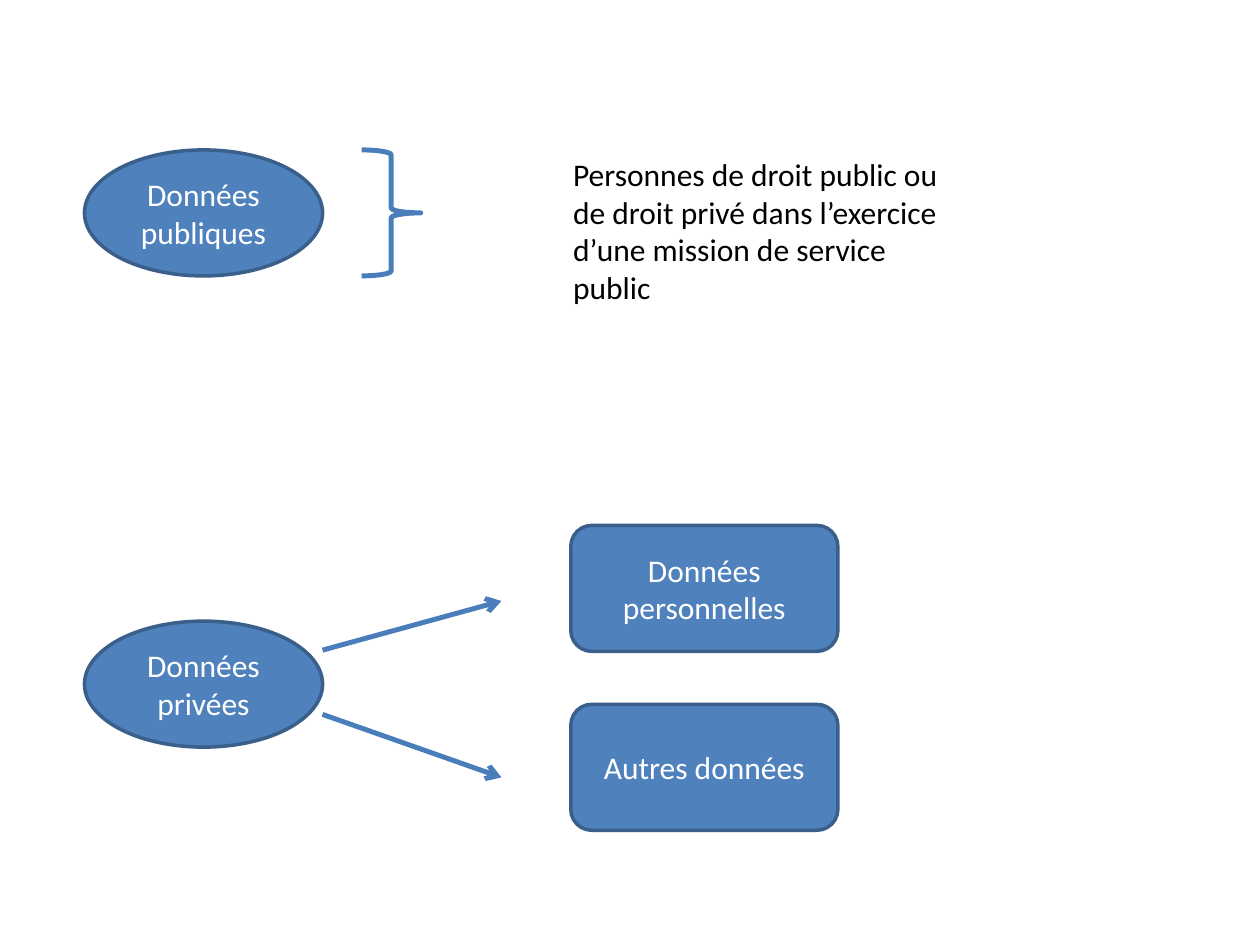
from dataclasses import dataclass

from lxml import etree
from pptx import Presentation
from pptx import util as u
from pptx.dml.color import RGBColor
from pptx.enum import shapes, text
from pptx.oxml.ns import qn

COLS, ROWS = 100, 75
WIDE, HIGH = u.Inches(10), u.Inches(7.5)


@dataclass(frozen=True)
class Theme:
    """Colours, font and sizes of the slide."""
    fill: str = "4F81BD"
    edge: str = "3A5F8B"
    link: str = "4A7EBB"
    light: str = "FFFFFF"
    dark: str = "000000"
    font: str = "Calibri"
    size: float = 18
    thin: float = 2
    thick: float = 2.83


THEME = Theme()
KIND = shapes.MSO_SHAPE


def grid(*spots):
    """Turn alternating columns and rows into slide lengths."""
    units = (WIDE / COLS, HIGH / ROWS)
    return [u.Emu(round(n * units[i % 2])) for i, n in enumerate(spots)]


def stroke(line, color, width):
    """Set the colour and width of a line."""
    line.color.rgb = RGBColor.from_string(color)
    line.width = u.Pt(width)


def write(shape, words, color=THEME.light, align=text.PP_ALIGN.CENTER,
          anchor=text.MSO_ANCHOR.MIDDLE):
    """Put formatted text into a shape."""
    frame = shape.text_frame
    frame.word_wrap = True
    frame.vertical_anchor = anchor
    para = frame.paragraphs[0]
    para.alignment = align
    run = para.add_run()
    run.text = words
    run.font.name = THEME.font
    run.font.size = u.Pt(THEME.size)
    run.font.color.rgb = RGBColor.from_string(color)


def node(slide, kind, words, *spot):
    """Add a filled shape with a centred label."""
    shape = slide.shapes.add_shape(kind, *grid(*spot))
    shape.shadow.inherit = False
    shape.fill.solid()
    shape.fill.fore_color.rgb = RGBColor.from_string(THEME.fill)
    stroke(shape.line, THEME.edge, THEME.thin)
    write(shape, words)


def brace(slide, *spot):
    """Add an open right brace."""
    shape = slide.shapes.add_shape(KIND.RIGHT_BRACE, *grid(*spot))
    shape.shadow.inherit = False
    shape.fill.background()
    stroke(shape.line, THEME.link, THEME.thick)


def note(slide, words, *spot):
    """Add a plain text box."""
    box = slide.shapes.add_textbox(*grid(*spot))
    write(box, words, color=THEME.dark, align=text.PP_ALIGN.LEFT,
          anchor=text.MSO_ANCHOR.TOP)


def arrow(slide, *ends):
    """Add a straight line with an open head at its end."""
    link = slide.shapes.add_connector(shapes.MSO_CONNECTOR.STRAIGHT, *grid(*ends))
    stroke(link.line, THEME.link, THEME.thick)
    etree.SubElement(link.line._get_or_add_ln(), qn("a:tailEnd"), type="arrow")
    etree.SubElement(link._element.spPr, qn("a:effectLst"))


def main():
    """Build and save the slide."""
    deck = Presentation()
    deck.slide_width, deck.slide_height = WIDE, HIGH
    slide = deck.slides.add_slide(deck.slide_layouts[6])

    for words, top in (("Données publiques", 11.9), ("Données privées", 49.3)):
        node(slide, KIND.OVAL, words, 6.7, top, 18.9, 10)
    brace(slide, 28.7, 11.9, 4.7, 10)
    note(slide, "Personnes de droit public ou de droit privé dans l’exercice "
         "d’une mission de service public", 44.5, 11.8, 33.1, 13)
    for start, end in ((56.7, 61.7), (51.6, 47.7)):
        arrow(slide, 25.6, start, 39.8, end)
    for words, top in (("Données personnelles", 41.7), ("Autres données", 55.9)):
        node(slide, KIND.ROUNDED_RECTANGLE, words, 45.3, top, 21.2, 10)

    deck.save("out.pptx")


if __name__ == "__main__":
    main()
